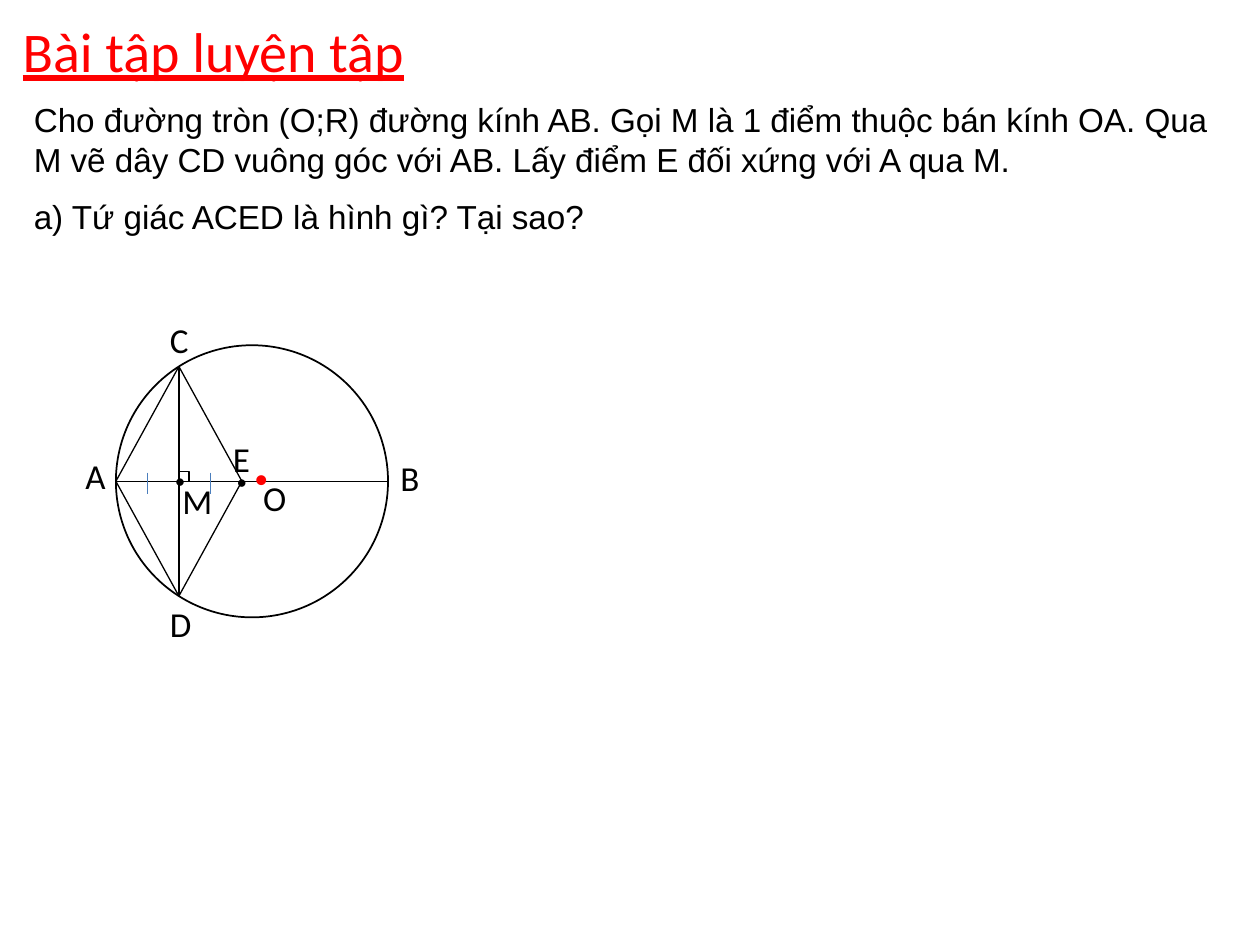
import math

import pptx
import pptx.dml.color
import pptx.enum.shapes
import pptx.enum.text
import pptx.oxml.ns
import pptx.util
from lxml import etree
from pptx.util import Inches

RGBColor = pptx.dml.color.RGBColor
BLACK = RGBColor(0, 0, 0)
WHITE = RGBColor(255, 255, 255)
RED = RGBColor(255, 0, 0)
BLUE = RGBColor(0x4B, 0x7E, 0xBC)
SHAPES = pptx.enum.shapes.MSO_SHAPE

TITLE = "Bài tập luyện tập"
PROBLEM = (
    "Cho đường tròn (O;R) đường kính AB. Gọi M là 1 điểm thuộc bán kính OA. "
    "Qua M vẽ dây CD vuông góc với AB. Lấy điểm E đối xứng với A qua M."
)
QUESTION = "a) Tứ giác ACED là hình gì? Tại sao?"

# Geometry in inches: M lies on OA, CD is the chord through M, E mirrors A in M
RADIUS = 1.08
OX, OY = 2.0, 3.82
MX = 1.42
HALF_CHORD = math.sqrt(RADIUS ** 2 - (OX - MX) ** 2)
POINTS = {
    "A": (OX - RADIUS, OY),
    "B": (OX + RADIUS, OY),
    "C": (MX, OY - HALF_CHORD),
    "D": (MX, OY + HALF_CHORD),
    "E": (2 * MX - (OX - RADIUS), OY),
}
SEGMENTS = ["AB", "CD", "CE", "AD", "ED", "CA"]
RIGHT_ANGLE = 0.08
TICK = 0.17

# text, left, top, width, height, size, colour, line spacing
LABELS = [
    ("A", 0.58, 3.56, 0.33, 0.43, 20, BLACK, 1),
    ("B", 3.08, 3.57, 0.5, 0.43, 20, BLACK, 1),
    ("C", 1.25, 2.48, 0.33, 0.43, 20, BLACK, 1),
    ("D", 1.25, 4.73, 0.33, 0.43, 20, BLACK, 1),
    ("M", 1.35, 3.76, 0.33, 0.43, 20, BLACK, 1),
    ("•", 1.92, 3.69, 0.33, 0.27, 16, RED, 0.65),
    ("O", 1.99, 3.73, 0.42, 0.43, 20, BLACK, 1),
    ("•", 1.29, 3.66, 0.33, 0.3, 12, BLACK, 1),
    ("E", 1.75, 3.42, 0.33, 0.43, 20, BLACK, 1),
    ("•", 1.78, 3.67, 0.33, 0.3, 12, BLACK, 1),
]


def add_span(para, text, size, font, color):
    para.alignment = pptx.enum.text.PP_ALIGN.LEFT
    span = para.add_run()
    span.text = text
    span.font.size = pptx.util.Pt(size)
    span.font.name = font
    span.font.color.rgb = color
    return span


def prepare_frame(shape):
    frame = shape.text_frame
    frame.word_wrap = True
    frame.auto_size = pptx.enum.text.MSO_AUTO_SIZE.NONE
    frame.vertical_anchor = pptx.enum.text.MSO_ANCHOR.TOP
    return frame


def add_shape(page, kind, bounds, line_color, line_width, fill=None):
    shape = page.shapes.add_shape(kind, *map(Inches, bounds))
    shape.shadow.inherit = False
    if fill is None:
        shape.fill.background()
    else:
        shape.fill.solid()
        shape.fill.fore_color.rgb = fill
    shape.line.color.rgb = line_color
    shape.line.width = pptx.util.Pt(line_width)
    return shape


def add_line(page, start, end, color=BLACK):
    line = page.shapes.add_connector(
        pptx.enum.shapes.MSO_CONNECTOR.STRAIGHT, *map(Inches, (*start, *end)))
    line.line.color.rgb = color
    line.line.width = pptx.util.Pt(0.75)
    properties = line._element.spPr
    etree.SubElement(properties, pptx.oxml.ns.qn("a:effectLst"))


def add_title(page):
    title = page.shapes.title
    title.left, title.top, title.width, title.height = map(
        Inches, (0.08, 0.08, 4.92, 0.64))
    para = prepare_frame(title).paragraphs[0]
    add_span(para, TITLE, 32, "Calibri", RED).font.underline = True


def add_problem(page):
    box = add_shape(page, SHAPES.RECTANGLE, (0.17, 0.74, 9.58, 1.7),
                    WHITE, 0.75, WHITE)
    frame = prepare_frame(box)
    add_span(frame.paragraphs[0], PROBLEM, 19, "Arial", BLACK)
    para = frame.add_paragraph()
    para.space_before = pptx.util.Pt(9.5)
    add_span(para, QUESTION, 19, "Arial", BLACK)


def add_figure(page):
    add_shape(page, SHAPES.OVAL,
              (OX - RADIUS, OY - RADIUS, 2 * RADIUS, 2 * RADIUS), BLACK, 1)
    for start, end in SEGMENTS:
        add_line(page, POINTS[start], POINTS[end])
    add_shape(page, SHAPES.RECTANGLE,
              (MX, OY - RIGHT_ANGLE, RIGHT_ANGLE, RIGHT_ANGLE), BLACK, 0.75)
    for text, left, top, width, height, size, color, spacing in LABELS:
        box = page.shapes.add_textbox(*map(Inches, (left, top, width, height)))
        para = prepare_frame(box).paragraphs[0]
        para.line_spacing = spacing
        add_span(para, text, size, "Calibri", color)
    for name in "AE":
        middle = (POINTS[name][0] + MX) / 2
        add_line(page, (middle, 3.75), (middle, 3.75 + TICK), BLUE)


def main():
    deck = pptx.Presentation()
    deck.slide_width, deck.slide_height = Inches(10), Inches(7.5)
    page = deck.slides.add_slide(deck.slide_layouts.get_by_name("Title Only"))
    add_title(page)
    add_problem(page)
    add_figure(page)
    deck.save("out.pptx")


if __name__ == "__main__":
    main()
